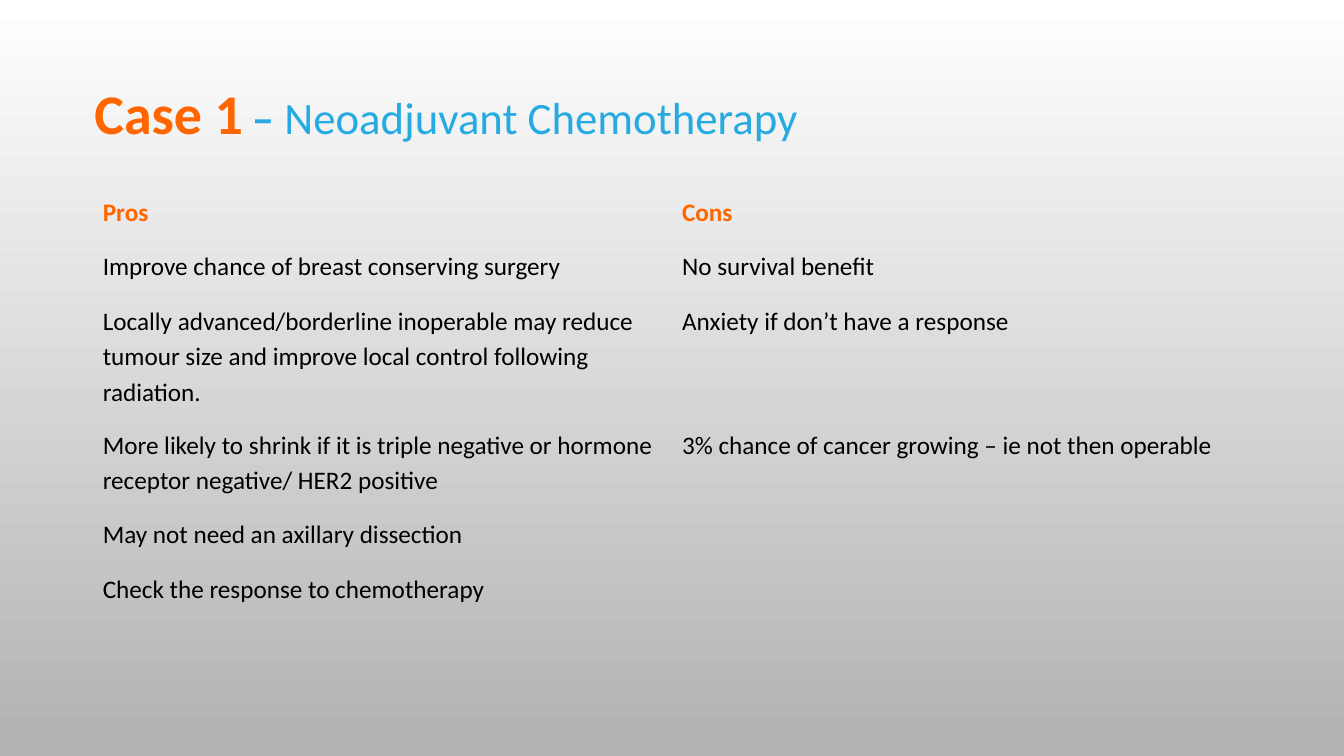
from pptx import Presentation
from pptx.dml.color import RGBColor
from pptx.enum.text import MSO_ANCHOR
from pptx.util import Cm, Pt

ORANGE = RGBColor(0xFF, 0x66, 0x00)
DASH_BLUE = RGBColor(0x29, 0xAA, 0xE2)
TITLE_BLUE = RGBColor(0x25, 0xAA, 0xE1)
BLACK = RGBColor(0x00, 0x00, 0x00)
WHITE = RGBColor(0xFF, 0xFF, 0xFF)
GREY = RGBColor(0xB2, 0xB2, 0xB2)
NO_STYLE_NO_GRID = "{2D5ABB26-0587-4C30-8999-92F81FD0307C}"


def format_run(run, size, color, bold):
    run.font.name = "Calibri"
    run.font.size = Pt(size)
    run.font.color.rgb = color
    run.font.bold = bold


presentation = Presentation()
presentation.slide_width = Cm(33.87)
presentation.slide_height = Cm(19.05)
slide = presentation.slides.add_slide(presentation.slide_layouts[6])

# Background fading downwards from white to grey
background = slide.background.fill
background.gradient()
background.gradient_angle = 270
for stop, color in zip(background.gradient_stops, (WHITE, GREY)):
    stop.color.rgb = color

# Title
title = slide.shapes.add_textbox(Cm(2.13), Cm(2.31), Cm(28.47), Cm(1.02))
title.text_frame.word_wrap = True
title.text_frame.vertical_anchor = MSO_ANCHOR.MIDDLE
title_parts = [
    ("Case 1", 40, ORANGE, True),
    (" ", 28, ORANGE, True),
    ("– ", 32, DASH_BLUE, True),
    ("Neoadjuvant Chemotherapy", 32, TITLE_BLUE, False),
]
for text, size, color, bold in title_parts:
    run = title.text_frame.paragraphs[0].add_run()
    run.text = text
    format_run(run, size, color, bold)

# Pros and cons, with the height of each row in cm
rows = [
    (1.3, "Pros", "Cons"),
    (1.19, "Improve chance of breast conserving surgery", "No survival benefit"),
    (2.79, "Locally advanced/borderline inoperable may reduce tumour size "
           "and improve local control following radiation.",
     "Anxiety if don’t have a response"),
    (2.01, "More likely to shrink if it is triple negative or hormone "
           "receptor negative/ HER2 positive",
     "3% chance of cancer growing – ie not then operable"),
    (1.19, "May not need an axillary dissection", ""),
    (1.19, "Check the response to chemotherapy", ""),
]
table_height = Cm(sum(row[0] for row in rows))
frame = slide.shapes.add_table(len(rows), 2, Cm(2.34), Cm(4.6), Cm(29.2), table_height)
table = frame.table
table.first_row = False
table.horz_banding = False
table._tbl.tblPr.find("{*}tableStyleId").text = NO_STYLE_NO_GRID

for row_index, (height, *texts) in enumerate(rows):
    table.rows[row_index].height = Cm(height)
    is_header = row_index == 0
    for column_index, text in enumerate(texts):
        cell = table.cell(row_index, column_index)
        cell.fill.background()
        cell.margin_left = cell.margin_right = Cm(0.25)
        cell.margin_top = cell.margin_bottom = Cm(0.25)
        if text:
            paragraph = cell.text_frame.paragraphs[0]
            paragraph.text = text
            paragraph.line_spacing = 1.15
            format_run(paragraph.runs[0], 18, ORANGE if is_header else BLACK, is_header)

presentation.save("out.pptx")
